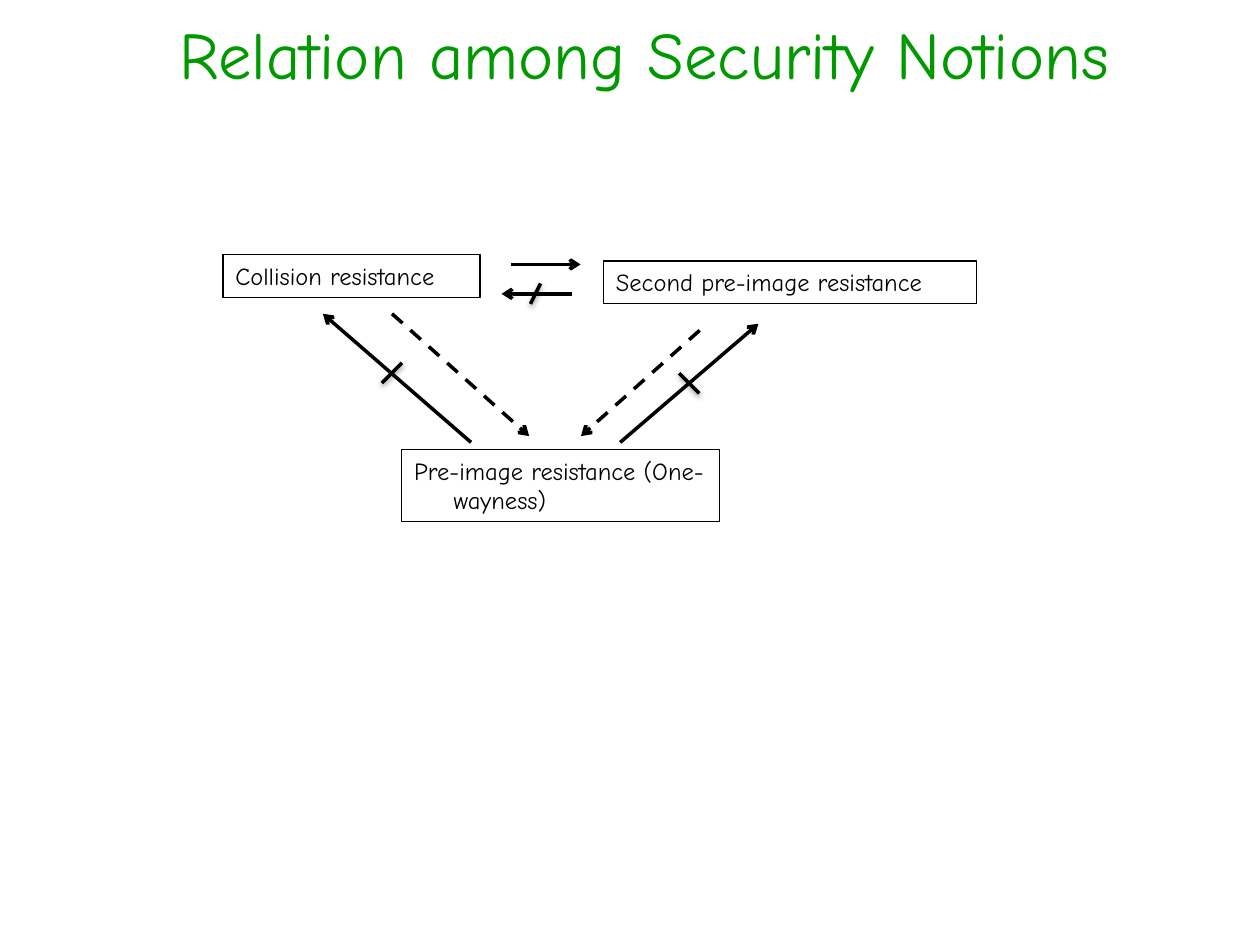
from lxml import etree
from pptx import Presentation
from pptx.dml.color import RGBColor
from pptx.enum import dml, shapes, text
from pptx.oxml import ns
from pptx.util import Pt

FONT = "Comic Neue"
GREEN = RGBColor(0x00, 0x99, 0x00)
BLACK = RGBColor(0x00, 0x00, 0x00)

# left, top, width, height
NOTIONS = [
    ("Collision resistance", (127.4, 145.4, 146.9, 24.5)),
    ("Second pre-image resistance", (344.9, 149.2, 213.1, 24.5)),
    ("Pre-image resistance (One-wayness)", (229.6, 257, 181.6, 41.2)),
]

# start x, start y, end x, end y
PLAIN_ARROWS = [
    (292.2, 151.1, 331.8, 151.1),
    (326.9, 167.9, 286.6, 167.9),
    (354.4, 252.8, 433.4, 185),
    (269.2, 252.8, 184.5, 179.3),
]
DASHED_ARROWS = [
    (399.8, 188.8, 332, 249.2),
    (224, 179.3, 302.4, 249.2),
]
STRIKES = [
    (303.1, 173.7, 308.9, 162),
    (399.6, 224.8, 388.1, 213.3),
    (229.7, 207.4, 218.2, 218.9),
]


def add_span(para, words, size, color):
    span = para.add_run()
    span.text = words
    span.font.name = FONT
    span.font.size = Pt(size)
    span.font.color.rgb = color


def add_title(page, words):
    box = page.shapes.add_textbox(Pt(-8.6), Pt(3.6), Pt(753.8), Pt(39.6))
    box.text_frame.word_wrap = True
    para = box.text_frame.paragraphs[0]
    para.alignment = text.PP_ALIGN.CENTER
    add_span(para, words, 38, GREEN)


def add_notion(page, words, bounds):
    box = page.shapes.add_shape(shapes.MSO_SHAPE.RECTANGLE, *map(Pt, bounds))
    box.shadow.inherit = False
    box.fill.background()
    box.line.color.rgb = BLACK
    box.line.width = Pt(0.75)
    frame = box.text_frame
    frame.word_wrap = True
    frame.auto_size = text.MSO_AUTO_SIZE.SHAPE_TO_FIT_TEXT
    frame.vertical_anchor = text.MSO_ANCHOR.TOP
    para = frame.paragraphs[0]
    para.alignment = text.PP_ALIGN.LEFT
    # Hanging indent for the wrapped line
    props = para._p.get_or_add_pPr()
    props.set("marL", str(Pt(22.5)))
    props.set("indent", str(Pt(-22.5)))
    add_span(para, words, 14, BLACK)


def add_line(page, ends):
    """Draw a black line and return it with its empty effect list."""
    line = page.shapes.add_connector(shapes.MSO_CONNECTOR.STRAIGHT, *map(Pt, ends))
    line.line.color.rgb = BLACK
    line.line.width = Pt(2)
    effects = etree.SubElement(line._element.spPr, ns.qn("a:effectLst"))
    return line, effects


def add_arrow(page, ends, dashed=False):
    line, _ = add_line(page, ends)
    if dashed:
        line.line.dash_style = dml.MSO_LINE.DASH
    etree.SubElement(line.line._get_or_add_ln(), ns.qn("a:tailEnd"), type="arrow")


def add_strike(page, ends):
    """Draw a shadowed stroke that negates an arrow."""
    _, effects = add_line(page, ends)
    shadow = etree.SubElement(
        effects, ns.qn("a:outerShdw"), blurRad=str(Pt(3.1)), dist=str(Pt(1.6)),
        dir="5400000", rotWithShape="0")
    color = etree.SubElement(shadow, ns.qn("a:srgbClr"), val=str(BLACK))
    etree.SubElement(color, ns.qn("a:alpha"), val="38000")


def main():
    deck = Presentation()
    deck.slide_width, deck.slide_height = Pt(720), Pt(540)
    page = deck.slides.add_slide(deck.slide_layouts[6])

    # Title and the three notions
    add_title(page, "Relation among Security Notions")
    for words, bounds in NOTIONS:
        add_notion(page, words, bounds)

    # Implications, and strokes through those that fail
    for ends in PLAIN_ARROWS:
        add_arrow(page, ends)
    for ends in DASHED_ARROWS:
        add_arrow(page, ends, dashed=True)
    for ends in STRIKES:
        add_strike(page, ends)

    deck.save("out.pptx")


if __name__ == "__main__":
    main()
